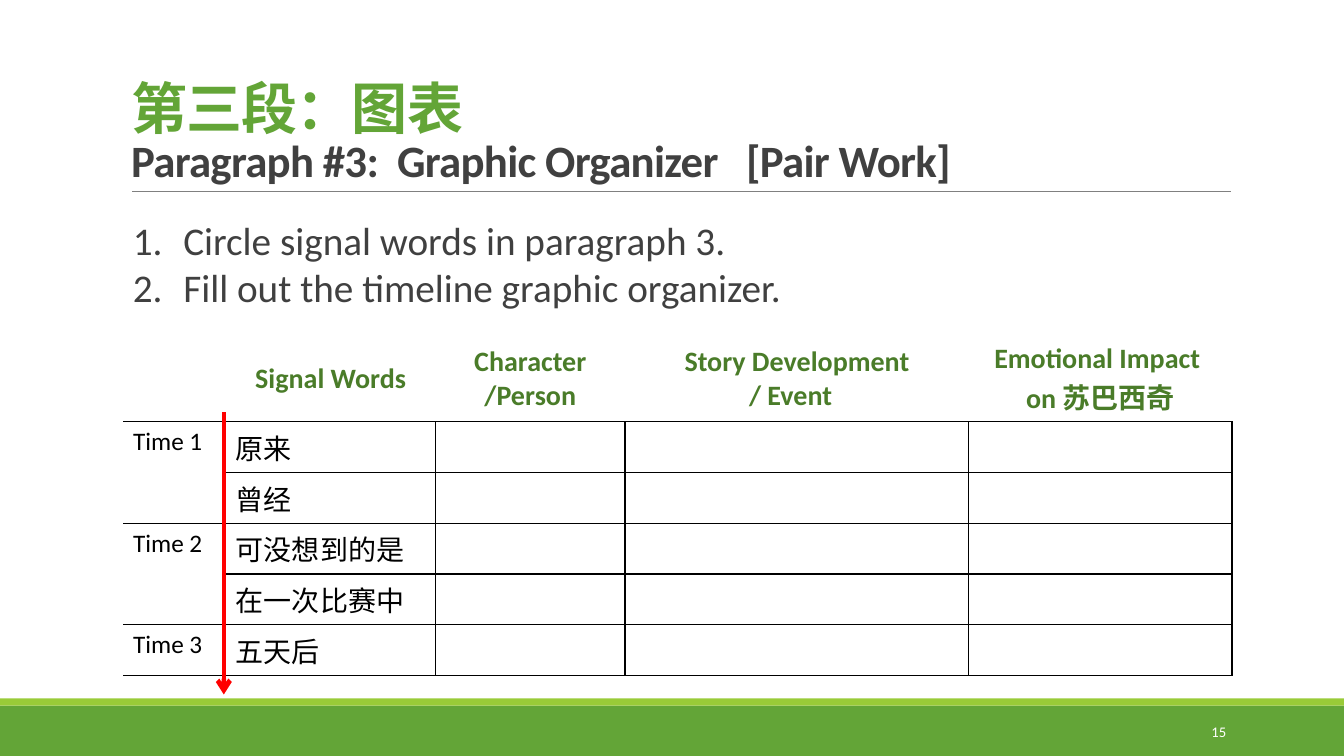
from lxml import etree
from pptx import Presentation, util as u
from pptx.dml.color import RGBColor
from pptx.enum import shapes, text
from pptx.oxml import ns

GREEN = RGBColor(0x63, 0xA5, 0x37)
LIME = RGBColor(0x99, 0xCB, 0x38)
DARK_GREEN = RGBColor(0x4A, 0x7C, 0x29)
GRAY = RGBColor(0x80, 0x80, 0x80)
CHARCOAL = RGBColor(0x40, 0x40, 0x40)
RED = RGBColor(0xFF, 0, 0)
BLACK = RGBColor(0, 0, 0)
WHITE = RGBColor(0xFF, 0xFF, 0xFF)
LATIN, CHINESE = "Calibri", "Noto Sans CJK SC"


def write(paragraph, words, size=20, font=LATIN, color=BLACK, bold=False,
          align=text.PP_ALIGN.LEFT, spacing=None):
    """Add words to a paragraph; a newline becomes a line break."""
    paragraph.alignment = align
    for i, line in enumerate(words.split("\n")):
        if i:
            paragraph.add_line_break()
        if not line:
            continue
        run = paragraph.add_run()
        run.text = line
        run.font.size, run.font.name, run.font.bold = u.Pt(size), font, bold
        run.font.color.rgb = color
        props = run.font._element
        etree.SubElement(props, ns.qn("a:ea"), typeface=font)
        if spacing is not None:
            props.set("spc", str(spacing))


def draw_line(x1, y1, x2, y2, color, width):
    line = slide.shapes.add_connector(shapes.MSO_CONNECTOR.STRAIGHT, *map(u.Inches, (x1, y1, x2, y2)))
    line.line.color.rgb, line.line.width = color, u.Pt(width)
    etree.SubElement(line._element.spPr, ns.qn("a:effectLst"))
    return line


prs = Presentation()
prs.slide_width, prs.slide_height = u.Inches(13.33), u.Inches(7.5)
slide = prs.slides.add_slide(prs.slide_layouts[5])

# Footer bands and title rule
for top, height, color in ((7, 0.5, GREEN), (6.93, 0.07, LIME)):
    band = slide.shapes.add_shape(shapes.MSO_SHAPE.RECTANGLE, 0, u.Inches(top),
                                  prs.slide_width, u.Inches(height))
    band.fill.solid()
    band.fill.fore_color.rgb = color
    band.line.fill.background()
    band.shadow.inherit = False
draw_line(1.31, 1.9, 12.21, 1.9, GRAY, 0.5)

# Title
title = slide.shapes.title
title.left, title.top, title.width, title.height = map(u.Inches, (1.2, 0.31, 11, 1.59))
heading = title.text_frame
heading.auto_size = text.MSO_AUTO_SIZE.NONE
heading.vertical_anchor = text.MSO_ANCHOR.BOTTOM
heading.paragraphs[0].line_spacing = 0.85
write(heading.paragraphs[0], "第三段：图表 \n", size=40, font=CHINESE, color=GREEN,
      bold=True, spacing=-50)
write(heading.paragraphs[0], "Paragraph #3:  Graphic Organizer   [Pair Work]", size=32,
      color=CHARCOAL, bold=True, spacing=-50)

# Timeline table
headers = ["", "Signal Words", "Character\n/Person", "Story Development\n/ Event  ",
           "Emotional Impact "]
signal_words = ["原来", "曾经", "可没想到的是", "在一次比赛中", "五天后"]
times = {1: "Time 1", 3: "Time 2", 5: "Time 3"}
column_widths = [1.02, 2.08, 1.88, 3.41, 2.61]

frame = slide.shapes.add_table(len(signal_words) + 1, len(headers), *map(u.Inches, (1.22, 3.34, 11, 2.74)))
timeline = frame.table
timeline.first_row = timeline.horz_banding = False
for column, width in zip(timeline.columns, column_widths):
    column.width = u.Inches(width)
for r, row in enumerate(timeline.rows):
    row.height = u.Inches(0.46 if r else 0.44)
    for c, cell in enumerate(row.cells):
        # Headers have only a bottom edge, times have no left edge
        sides = "B" if r == 0 else "RTB" if c == 0 else "LRTB"
        for side in "LRTB":
            edge = etree.SubElement(cell._tc.get_or_add_tcPr(), ns.qn(f"a:ln{side}"), w="12700")
            if side in sides:
                fill = etree.SubElement(edge, ns.qn("a:solidFill"))
                etree.SubElement(fill, ns.qn("a:srgbClr"), val=str(BLACK))
            else:
                etree.SubElement(edge, ns.qn("a:noFill"))
        cell.fill.background()

header_format = dict(color=DARK_GREEN, bold=True, align=text.PP_ALIGN.CENTER)
for c, header in enumerate(headers):
    cell = timeline.cell(0, c)
    cell.vertical_anchor = text.MSO_ANCHOR.MIDDLE
    write(cell.text_frame.paragraphs[0], header, **header_format)
name_line = timeline.cell(0, 4).text_frame.add_paragraph()
write(name_line, "on ", **header_format)
write(name_line, "苏巴西奇", font=CHINESE, **header_format)

for r, words in enumerate(signal_words, 1):
    write(timeline.cell(r, 1).text_frame.paragraphs[0], words, font=CHINESE)
for r, time in times.items():
    write(timeline.cell(r, 0).text_frame.paragraphs[0], time, size=18)
for r in (1, 3):
    timeline.cell(r, 0).merge(timeline.cell(r + 1, 0))

# Time arrow
arrow = draw_line(2.22, 4.09, 2.22, 6.89, RED, 3.25)
etree.SubElement(arrow.line._get_or_add_ln(), ns.qn("a:tailEnd"), type="arrow")

# Numbered instructions
steps = slide.shapes.add_textbox(*map(u.Inches, (1.22, 2.1, 6.7, 1.04))).text_frame
steps.word_wrap = False
steps.auto_size = text.MSO_AUTO_SIZE.SHAPE_TO_FIT_TEXT
for i, step in enumerate(("Circle signal words in paragraph 3.",
                          "Fill out the timeline graphic organizer.")):
    paragraph = steps.add_paragraph() if i else steps.paragraphs[0]
    write(paragraph, step, size=28, color=CHARCOAL)
    props = paragraph._p.get_or_add_pPr()
    props.set("marL", str(u.Inches(0.5)))
    props.set("indent", str(-u.Inches(0.5)))
    etree.SubElement(props, ns.qn("a:buFont"), typeface="+mj-lt")
    etree.SubElement(props, ns.qn("a:buAutoNum"), type="arabicPeriod")

# Slide number
number = slide.shapes.add_textbox(*map(u.Inches, (10.83, 7.06, 1.43, 0.4))).text_frame
number.word_wrap = True
number.vertical_anchor = text.MSO_ANCHOR.MIDDLE
write(number.paragraphs[0], "15", size=10.5, color=WHITE, align=text.PP_ALIGN.RIGHT)

prs.save("out.pptx")
